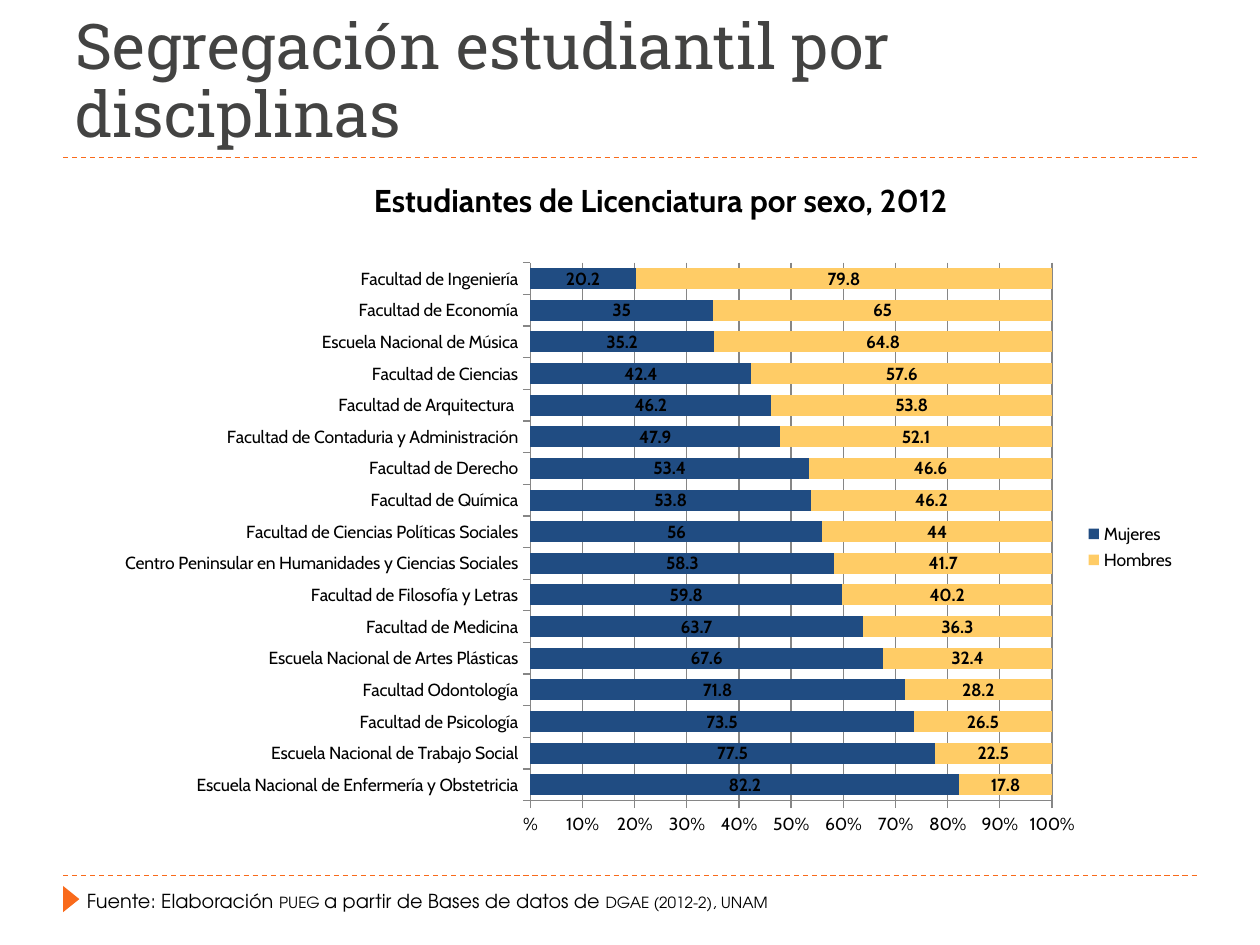
from lxml.etree import SubElement
from pptx import Presentation
from pptx.chart.data import CategoryChartData
from pptx.dml.color import RGBColor
from pptx.enum.chart import XL_CHART_TYPE, XL_LABEL_POSITION, XL_LEGEND_POSITION, XL_TICK_MARK
from pptx.enum.dml import MSO_LINE
from pptx.enum.shapes import MSO_CONNECTOR, MSO_SHAPE
from pptx.enum.text import MSO_ANCHOR, MSO_AUTO_SIZE
from pptx.oxml.ns import qn
from pptx.util import Cm, Pt

WOMEN_SHARE = {
    "Escuela Nacional de Enfermería y Obstetricia": 82.2,
    "Escuela Nacional de Trabajo Social": 77.5,
    "Facultad de Psicología": 73.5,
    "Facultad Odontología": 71.8,
    "Escuela Nacional de Artes Plásticas": 67.6,
    "Facultad de Medicina": 63.7,
    "Facultad de Filosofía y Letras": 59.8,
    "Centro Peninsular en Humanidades y Ciencias Sociales": 58.3,
    "Facultad de Ciencias Políticas Sociales": 56,
    "Facultad de Química": 53.8,
    "Facultad de Derecho": 53.4,
    "Facultad de Contaduria y Administración": 47.9,
    "Facultad de Arquitectura ": 46.2,
    "Facultad de Ciencias": 42.4,
    "Escuela Nacional de Música": 35.2,
    "Facultad de Economía": 35,
    "Facultad de Ingeniería": 20.2,
}
SEX_COLORS = {"Mujeres": "204C82", "Hombres": "FFCC66"}
PLOT_AREA = {"x": 0.42, "y": 0.03, "w": 0.46, "h": 0.89}


def rgb(code):
    return RGBColor.from_string(code)


def apply_format(target, values):
    for key, value in values.items():
        setattr(target, key, value)


class SlideBuilder:
    """Holds the style and the current slide, and adds each kind of element."""

    accent = "F96A1B"
    ink = "000000"
    axis_gray = "868686"
    body_font = "Cabin"

    def __init__(self, slide):
        self.slide = slide

    def rule(self, y):
        divider = self.slide.shapes.add_connector(
            MSO_CONNECTOR.STRAIGHT, Cm(1.27), Cm(y), Cm(24.13), Cm(y))
        divider.line.color.rgb = rgb(self.accent)
        apply_format(divider.line, {"width": Pt(0.75), "dash_style": MSO_LINE.DASH})
        SubElement(divider._element.spPr, qn("a:effectLst"))

    def marker(self, *box):
        pointer = self.slide.shapes.add_shape(MSO_SHAPE.ISOSCELES_TRIANGLE, *map(Cm, box))
        apply_format(pointer, {"rotation": 90})
        pointer.shadow.inherit = False
        pointer.fill.solid()
        pointer.fill.fore_color.rgb = rgb(self.accent)
        pointer.line.fill.background()

    def text(self, box, runs, font, color=ink, frame=None, spacing=None):
        text_frame = self.slide.shapes.add_textbox(*map(Cm, box)).text_frame
        apply_format(text_frame, {"word_wrap": True, **(frame or {})})
        paragraph = text_frame.paragraphs[0]
        paragraph.line_spacing = spacing
        for wording, small_caps in runs:
            run = paragraph.add_run()
            run.text = wording
            apply_format(run.font, font)
            run.font.color.rgb = rgb(color)
            if small_caps:
                run.font._element.set("cap", "small")

    def stacked_bars(self, box, shares):
        data = CategoryChartData()
        data.categories = list(shares)
        women = list(shares.values())
        men = [round(100 - share, 1) for share in women]
        for sex, values in zip(SEX_COLORS, (women, men)):
            data.add_series(sex, values)
        chart = self.slide.shapes.add_chart(
            XL_CHART_TYPE.BAR_STACKED, *map(Cm, box), data).chart
        apply_format(chart, {"has_title": False, "has_legend": True})
        apply_format(chart.font, {"name": self.body_font, "size": Pt(10)})
        chart.font.color.rgb = rgb(self.ink)
        apply_format(chart.legend, {"position": XL_LEGEND_POSITION.RIGHT,
                                    "include_in_layout": False})
        self.bars(chart.plots[0])
        self.axes(chart)
        self.plot_area(chart)

    def bars(self, plot):
        apply_format(plot, {"gap_width": 51, "overlap": 100, "vary_by_categories": False})
        for series in plot.series:
            series.format.fill.solid()
            series.format.fill.fore_color.rgb = rgb(SEX_COLORS[series.name])
            labels = series.data_labels
            apply_format(labels, {"show_value": True, "position": XL_LABEL_POSITION.CENTER})
            apply_format(labels.font, {"bold": True, "size": Pt(10), "name": self.body_font})
            labels.font.color.rgb = rgb(self.ink)

    def axes(self, chart):
        scale = chart.value_axis
        apply_format(scale, {"minimum_scale": 0, "maximum_scale": 100, "major_unit": 10,
                             "has_major_gridlines": True})
        apply_format(scale.tick_labels, {"number_format": "#\\%",
                                         "number_format_is_linked": False})
        for axis in (scale, chart.category_axis):
            axis.major_tick_mark = XL_TICK_MARK.OUTSIDE
        for part in (scale, scale.major_gridlines, chart.category_axis):
            part.format.line.color.rgb = rgb(self.axis_gray)
            part.format.line.width = Pt(0.75)

    def plot_area(self, chart):
        area = chart._chartSpace.chart.plotArea
        layout = area.find(qn("c:layout"))
        if layout is None:
            layout = SubElement(area, qn("c:layout"))
            area.insert(0, layout)
        manual = SubElement(layout, qn("c:manualLayout"))
        settings = {"layoutTarget": "inner", "xMode": "edge", "yMode": "edge", **PLOT_AREA}
        for tag, value in settings.items():
            SubElement(manual, qn(f"c:{tag}")).set("val", str(value))


def main():
    presentation = Presentation()
    apply_format(presentation, {"slide_width": Cm(25.4), "slide_height": Cm(19.05)})
    builder = SlideBuilder(presentation.slides.add_slide(presentation.slide_layouts[6]))
    for y in (17.65, 3.18):
        builder.rule(y)
    builder.marker(1.17, 17.96, 0.53, 0.33)
    builder.text((1.27, 0.43, 22.86, 2.74),
                 [("Segregación estudiantil por disciplinas", False)],
                 {"name": "Roboto Slab", "size": Pt(36)}, "434342",
                 {"vertical_anchor": MSO_ANCHOR.BOTTOM}, 0.9)
    builder.text((1.5, 17.81, 18.16, 0.74),
                 [("Fuente: Elaboración ", False), ("pueg ", True),
                  ("a partir de Bases de datos de ", False), ("dgae (2012-2), unam", True)],
                 {"name": "TeX Gyre Adventor", "size": Pt(11)},
                 frame={"auto_size": MSO_AUTO_SIZE.SHAPE_TO_FIT_TEXT})
    builder.stacked_bars((1.09, 4.93, 22.86, 12.19), WOMEN_SHARE)
    builder.text((7.29, 3.53, 13.67, 1.02),
                 [("Estudiantes de Licenciatura por sexo, 2012", False)],
                 {"name": builder.body_font, "size": Pt(18), "bold": True},
                 frame={"word_wrap": False, "auto_size": MSO_AUTO_SIZE.SHAPE_TO_FIT_TEXT})
    presentation.save("out.pptx")


if __name__ == "__main__":
    main()
